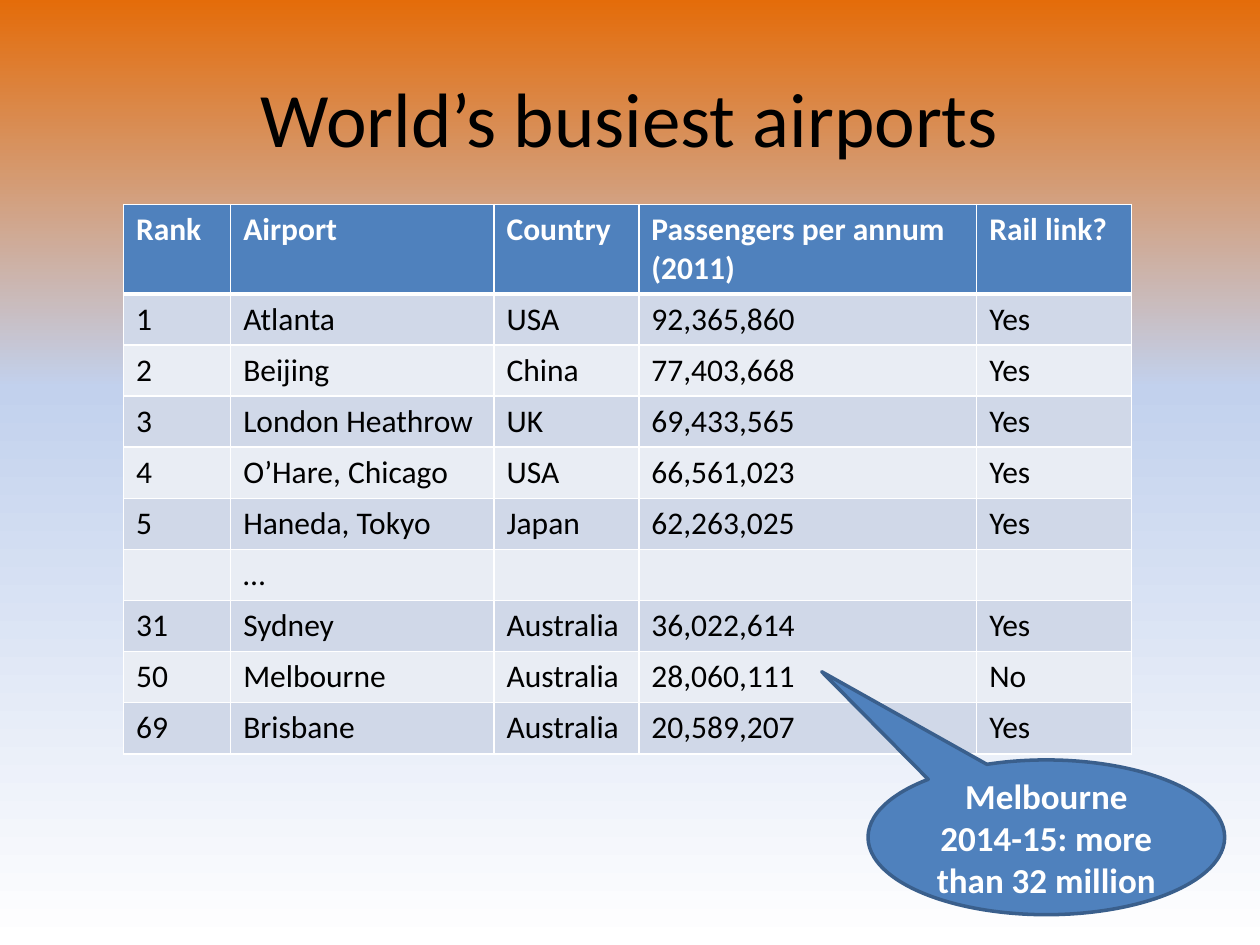
from copy import deepcopy

from pptx import Presentation
from pptx.dml.color import RGBColor
from pptx.enum.shapes import MSO_SHAPE
from pptx.enum.text import MSO_ANCHOR, PP_ALIGN
from pptx.oxml.ns import qn
from pptx.oxml.xmlchemy import OxmlElement
from pptx.util import Cm, Pt

CALLOUT = MSO_SHAPE.OVAL_CALLOUT
MIDDLE = MSO_ANCHOR.MIDDLE
CENTER = PP_ALIGN.CENTER
TITLE_ONLY = 5
FONT = "Calibri"

COLORS = {
    "sky_top": "E46C0A",
    "sky_middle": "C2D1ED",
    "white": "FFFFFF",
    "black": "000000",
    "blue": "4F81BD",
    "blue_edge": "3A5F8C",
    "band_dark": "D0D8E8",
    "band_light": "E9EDF4",
}

HEADER = ["Rank", "Airport", "Country", "Passengers per annum (2011)", "Rail link?"]
AIRPORTS = [
    ["1", "Atlanta", "USA", "92,365,860", "Yes"],
    ["2", "Beijing", "China", "77,403,668", "Yes"],
    ["3", "London Heathrow", "UK", "69,433,565", "Yes"],
    ["4", "O’Hare, Chicago", "USA", "66,561,023", "Yes"],
    ["5", "Haneda, Tokyo", "Japan", "62,263,025", "Yes"],
    ["", "…", "", "", ""],
    ["31", "Sydney", "Australia", "36,022,614", "Yes"],
    ["50", "Melbourne", "Australia", "28,060,111", "No"],
    ["69", "Brisbane", "Australia", "20,589,207", "Yes"],
]
COLUMN_WIDTHS = [2.16, 5.31, 2.92, 6.81, 3.12]
HEADER_HEIGHT, ROW_HEIGHT = 1.52, 0.89


def rgb(name):
    return RGBColor.from_string(COLORS[name])


def write(frame, text, size, color, bold=False, align=None):
    frame.text = text
    paragraph = frame.paragraphs[0]
    if align is not None:
        paragraph.alignment = align
    for run in paragraph.runs:
        run.font.name = FONT
        run.font.size = Pt(size)
        run.font.bold = bold
        run.font.color.rgb = rgb(color)


def paint_background(slide):
    fill = slide.background.fill
    fill.gradient()
    fill.gradient_angle = 270
    stop_list = next(slide.element.iter(qn("a:gsLst")))
    stop_list.append(deepcopy(stop_list[-1]))
    sky = [(0, "sky_top"), (0.41, "sky_middle"), (1, "white")]
    for stop, (position, color) in zip(fill.gradient_stops, sky):
        stop.position = position
        stop.color.rgb = rgb(color)


def add_title(slide, text):
    title = slide.shapes.title
    title.left, title.top = Cm(1.27), Cm(0.76)
    title.width, title.height = Cm(22.86), Cm(3.18)
    title.text_frame.vertical_anchor = MIDDLE
    write(title.text_frame, text, 44, "black", align=CENTER)


def set_borders(cell, top, bottom):
    """Draw white cell edges; call before filling, as edges precede the fill."""
    properties = cell._tc.get_or_add_tcPr()
    for side, width in (("L", 1), ("R", 1), ("T", top), ("B", bottom)):
        edge = OxmlElement(f"a:ln{side}")
        edge.set("w", str(Pt(width)))
        fill = OxmlElement("a:solidFill")
        color = OxmlElement("a:srgbClr")
        color.set("val", COLORS["white"])
        fill.append(color)
        edge.append(fill)
        properties.append(edge)


def add_airport_table(slide):
    rows = [HEADER] + AIRPORTS
    frame = slide.shapes.add_table(
        len(rows), len(HEADER), Cm(2.49), Cm(4.12), Cm(20.32), Cm(10.92))
    table = frame.table
    for column, width in zip(table.columns, COLUMN_WIDTHS):
        column.width = Cm(width)
    for r, values in enumerate(rows):
        is_header = r == 0
        table.rows[r].height = Cm(HEADER_HEIGHT if is_header else ROW_HEIGHT)
        band = "blue" if is_header else "band_dark" if r % 2 else "band_light"
        for cell, value in zip(table.rows[r].cells, values):
            set_borders(cell, top=3 if r == 1 else 1, bottom=3 if is_header else 1)
            cell.fill.solid()
            cell.fill.fore_color.rgb = rgb(band)
            write(cell.text_frame, value, 18,
                  "white" if is_header else "black", bold=is_header)
    frame.height = Cm(10.92)


def add_callout(slide, text):
    callout = slide.shapes.add_shape(CALLOUT, Cm(17.5), Cm(15.32), Cm(7.19), Cm(3.12))
    callout.adjustments[0] = -0.63
    callout.adjustments[1] = -1.07
    callout.shadow.inherit = False
    callout.fill.solid()
    callout.fill.fore_color.rgb = rgb("blue")
    callout.line.color.rgb = rgb("blue_edge")
    callout.line.width = Pt(2)
    callout.text_frame.word_wrap = True
    callout.text_frame.vertical_anchor = MIDDLE
    write(callout.text_frame, text, 20, "white", bold=True, align=CENTER)


def main():
    presentation = Presentation()
    presentation.slide_width, presentation.slide_height = Cm(25.4), Cm(19.05)
    slide = presentation.slides.add_slide(presentation.slide_layouts[TITLE_ONLY])
    paint_background(slide)
    add_title(slide, "World’s busiest airports")
    add_airport_table(slide)
    add_callout(slide, "Melbourne 2014-15: more than 32 million")
    presentation.save("out.pptx")


if __name__ == "__main__":
    main()
